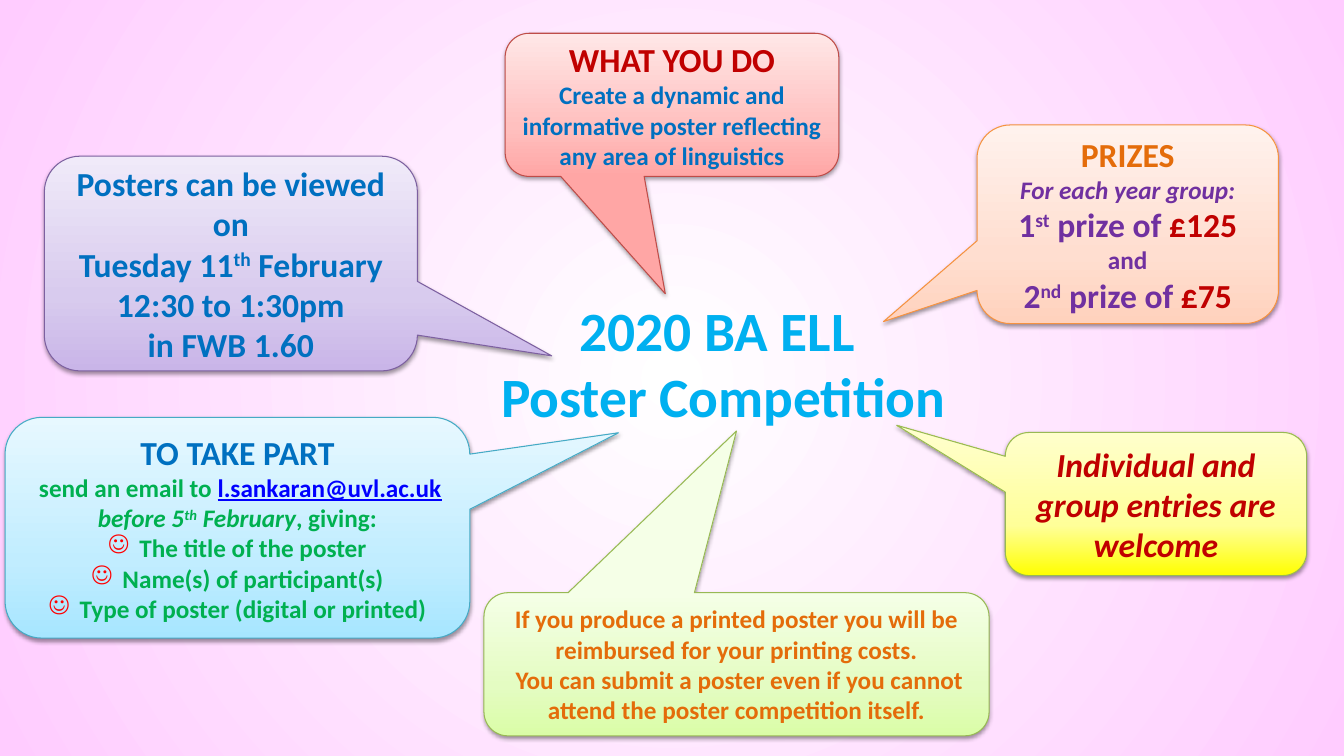
from dataclasses import dataclass

import pptx
import pptx.dml.color
import pptx.enum.shapes
import pptx.enum.text
import pptx.oxml
import pptx.oxml.ns
import pptx.util

Inches = pptx.util.Inches
qn = pptx.oxml.ns.qn
NS = pptx.oxml.ns.nsdecls("a")

BLUE, RED, ORANGE = "0070C0", "C00000", "E46C0A"
PURPLE, GREEN, SKY = "7030A0", "00B050", "00B0F0"
UPWARD = '<a:lin ang="16200000" scaled="1"/>'
RADIAL = ('<a:path path="circle"><a:fillToRect l="50000" t="50000" '
          'r="50000" b="50000"/></a:path>')


@dataclass
class Run:
    text: str
    size: float
    color: str
    style: str = ""


@dataclass
class Line:
    runs: list[Run]
    smile: bool = False


@dataclass
class Bubble:
    box: tuple[float, float, float, float]
    tip: tuple[float, float]
    shades: tuple[str, str, str]
    edge: str
    lines: list[Line]


def tint(code: str) -> pptx.dml.color.RGBColor:
    return pptx.dml.color.RGBColor.from_string(code)


def blend(owner, fill, stops: list[tuple[int, str]], course: str) -> None:
    fill.gradient()
    old = next(owner.iter(qn("a:gradFill")))
    marks = "".join(
        f'<a:gs pos="{pos * 1000}"><a:srgbClr val="{code}"/></a:gs>'
        for pos, code in stops)
    new = pptx.oxml.parse_xml(
        f'<a:gradFill {NS} rotWithShape="1"><a:gsLst>{marks}</a:gsLst>'
        f'{course}</a:gradFill>')
    old.getparent().replace(old, new)


def shade(shape) -> None:
    shape.shadow.inherit = False
    glow = next(shape.element.iter(qn("a:effectLst")))
    glow.append(pptx.oxml.parse_xml(
        f'<a:outerShdw {NS} blurRad="{pptx.util.Pt(3.1)}" '
        f'dist="{pptx.util.Pt(1.6)}" dir="5400000" rotWithShape="0">'
        '<a:srgbClr val="000000"><a:alpha val="38000"/></a:srgbClr>'
        '</a:outerShdw>'))


def add_run(para, item: Run) -> None:
    run = para.add_run()
    run.text = item.text
    font = run.font
    font.name = "Calibri"
    font.size = pptx.util.Pt(item.size)
    font.bold = True
    font.italic = "i" in item.style
    font.underline = "u" in item.style
    font.color.rgb = tint(item.color)
    if "^" in item.style:
        run.font._element.set("baseline", "30000")


def add_smile(para) -> None:
    props = para._p.get_or_add_pPr()
    props.set("marL", str(Inches(0.31)))
    props.set("indent", str(Inches(-0.31)))
    props.append(pptx.oxml.parse_xml(
        f'<a:buClr {NS}><a:srgbClr val="FF0000"/></a:buClr>'))
    props.append(pptx.oxml.parse_xml(f'<a:buChar {NS} char="☺"/>'))


def write(frame, lines: list[Line]) -> None:
    frame.word_wrap = True
    frame.vertical_anchor = pptx.enum.text.MSO_ANCHOR.MIDDLE
    for index, line in enumerate(lines):
        para = frame.add_paragraph() if index else frame.paragraphs[0]
        para.alignment = pptx.enum.text.PP_ALIGN.CENTER
        if line.smile:
            add_smile(para)
        for item in line.runs:
            if item.text == "\n":
                para.add_line_break()
            else:
                add_run(para, item)


def draw(slide, bubble: Bubble) -> None:
    shape = slide.shapes.add_shape(
        pptx.enum.shapes.MSO_SHAPE.ROUNDED_RECTANGULAR_CALLOUT,
        *map(Inches, bubble.box))
    shape.adjustments[0], shape.adjustments[1] = bubble.tip
    stops = list(zip((0, 35, 100), bubble.shades))
    blend(shape.element, shape.fill, stops, UPWARD)
    shape.line.color.rgb = tint(bubble.edge)
    shape.line.width = pptx.util.Pt(0.75)
    shade(shape)
    write(shape.text_frame, bubble.lines)


def plain(text: str, size: float, color: str, style: str = "") -> Line:
    return Line([Run(text, size, color, style)])


def prize(rank: str, suffix: str, sum_: str) -> Line:
    return Line([Run(rank, 24, PURPLE), Run(suffix, 24, PURPLE, "^"),
                 Run(" prize of ", 24, PURPLE), Run(sum_, 24, RED)])


TITLE = [Line([Run("2020 BA ELL ", 39.6, SKY), Run("\n", 39.6, SKY),
               Run("Poster Competition", 39.6, SKY)])]

BUBBLES = [
    Bubble((0.44, 1.55, 3.7, 2.13), (0.86, 0.43),
           ("C9B5E8", "D8CBEE", "F0EAF9"), "7D60A0", [
        plain("Posters can be viewed on", 24, BLUE),
        Line([Run("Tuesday 11", 24, BLUE), Run("th", 24, BLUE, "^"),
              Run(" February", 24, BLUE)]),
        plain("12:30 to 1:30pm", 24, BLUE),
        plain("in FWB 1.60", 24, BLUE)]),
    Bubble((5.01, 0.33, 3.31, 1.42), (-0.02, 1.32),
           ("FFA6A5", "FFC0BF", "FFE7E7"), "BF4C48", [
        plain("WHAT YOU DO", 24, RED),
        plain("Create a dynamic and informative poster reflecting "
              "any area of linguistics", 18, BLUE)]),
    Bubble((9.69, 1.24, 2.99, 1.97), (-0.81, 0.49),
           ("FFD2BD", "FFDED0", "FFF2ED"), "F69240", [
        plain("PRIZES", 24, ORANGE),
        plain("For each year group:", 18, PURPLE, "i"),
        prize("1", "st", "£125"),
        plain(" and ", 18, PURPLE),
        prize("2", "nd", "£75")]),
    Bubble((4.8, 5.88, 5.01, 1.42), (0, -1.63),
           ("DAFDA7", "E4FCC2", "F5FFE7"), "98B955", [
        plain("If you produce a printed poster you will be reimbursed "
              "for your printing costs.", 18, ORANGE),
        plain(" You can submit a poster even if you cannot attend "
              "the poster competition itself.", 18, ORANGE)]),
    Bubble((9.97, 4.29, 2.99, 1.42), (-0.86, -0.55),
           ("FFFF00", "FFFF99", "FFFFCC"), "98B955", [
        plain("Individual and group entries are welcome", 24, RED, "i")]),
    Bubble((0.05, 4.14, 4.61, 2.19), (0.82, -0.43),
           ("A7E6FF", "C1EDFF", "E7F8FF"), "46AAC5", [
        plain("TO TAKE PART", 24, BLUE),
        Line([Run(" send an email to ", 18, GREEN),
              Run("l.sankaran@uvl.ac.uk", 18, "0000FF", "u"),
              Run(" ", 18, GREEN), Run("before 5", 18, GREEN, "i"),
              Run("th", 18, GREEN, "i^"), Run(" February", 18, GREEN, "i"),
              Run(", giving:", 18, GREEN)]),
        *(Line([Run(text, 18, GREEN)], True) for text in (
            "The title of the poster", "Name(s) of participant(s)",
            "Type of poster (digital or printed)"))]),
]


def main() -> None:
    deck = pptx.Presentation()
    deck.slide_width, deck.slide_height = Inches(13.33), Inches(7.5)
    slide = deck.slides.add_slide(deck.slide_layouts[6])
    blend(slide.element, slide.background.fill,
          [(0, "FFFFFF"), (100, "FFCCFF")], RADIAL)
    title = slide.shapes.add_textbox(*map(Inches, (4.8, 2.81, 4.75, 1.57)))
    write(title.text_frame, TITLE)
    for bubble in BUBBLES:
        draw(slide, bubble)
    deck.save("out.pptx")


if __name__ == "__main__":
    main()
